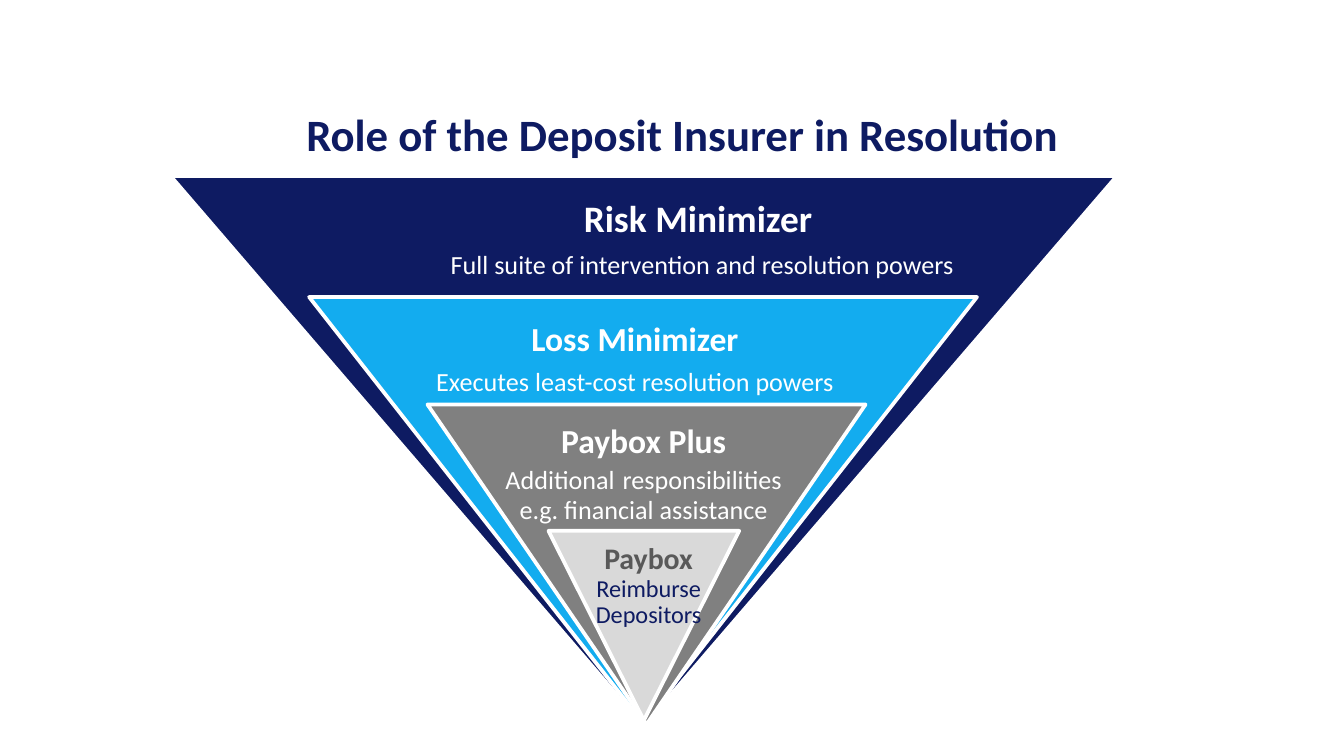
from dataclasses import dataclass

import pptx
import pptx.dml.color
import pptx.enum.shapes
import pptx.enum.text
import pptx.util

Pt = pptx.util.Pt
Shapes = pptx.enum.shapes.MSO_SHAPE


@dataclass(frozen=True)
class Theme:
    font: str = "Calibri"
    navy: str = "0E1B62"
    sky: str = "13ACEF"
    gray: str = "808080"
    silver: str = "D9D9D9"
    charcoal: str = "595959"
    white: str = "FFFFFF"
    title_size: int = 24
    large: int = 20
    medium: int = 18
    small: int = 16
    body: int = 14
    caption: int = 13


THEME = Theme()


@dataclass(frozen=True)
class Box:
    left: float
    top: float
    width: float
    height: float

    def lengths(self):
        return Pt(self.left), Pt(self.top), Pt(self.width), Pt(self.height)


@dataclass(frozen=True)
class Level:
    box: Box
    text_box: Box
    fill: str
    heading: str
    heading_size: int
    heading_color: str
    details: tuple
    detail_color: str
    gap: float = 0


LEVELS = [
    Level(Box(91.4, 94.3, 506.9, 293), Box(229, 107, 294.5, 46), THEME.navy,
          "Risk Minimizer ", THEME.large, THEME.white,
          (("Full suite of intervention and resolution powers", THEME.body),),
          THEME.white, 6.5),
    Level(Box(165.6, 159.1, 357.8, 228.2), Box(208.8, 172.6, 262.8, 42), THEME.sky,
          "Loss Minimizer", THEME.medium, THEME.white,
          (("Executes least-cost resolution powers", THEME.body),),
          THEME.white, 5.5),
    Level(Box(229, 216.7, 234.7, 171.4), Box(267.1, 227.2, 155.5, 56), THEME.gray,
          "Paybox Plus", THEME.medium, THEME.white,
          (("Additional", THEME.body), (" ", THEME.medium),
           ("responsibilities", THEME.body), (" ", THEME.medium),
           ("e.g. financial assistance", THEME.body)),
          THEME.white),
    Level(Box(293.8, 284.4, 102.2, 101.5), Box(308.2, 291.5, 78.5, 47), THEME.silver,
          "Paybox", THEME.small, THEME.charcoal,
          (("Reimburse Depositors", THEME.caption),),
          THEME.navy),
]


def rgb(value):
    return pptx.dml.color.RGBColor.from_string(value)


def add_run(paragraph, text, size, color, bold=False):
    run = paragraph.add_run()
    run.text = text
    run.font.name = THEME.font
    run.font.size = Pt(size)
    run.font.bold = bold
    run.font.color.rgb = rgb(color)


def add_filled_shape(slide, kind, box, fill):
    shape = slide.shapes.add_shape(kind, *box.lengths())
    shape.shadow.inherit = False
    shape.fill.solid()
    shape.fill.fore_color.rgb = rgb(fill)
    return shape


def draw_title(slide, box):
    shape = add_filled_shape(slide, Shapes.ROUNDED_RECTANGLE, box, THEME.white)
    shape.line.fill.background()
    frame = shape.text_frame
    frame.word_wrap = True
    frame.vertical_anchor = pptx.enum.text.MSO_ANCHOR.TOP
    frame.margin_top = Pt(5)
    frame.margin_bottom = 0
    paragraph = frame.paragraphs[0]
    paragraph.alignment = pptx.enum.text.PP_ALIGN.CENTER
    add_run(paragraph, "Role of the Deposit Insurer in Resolution",
            THEME.title_size, THEME.navy, True)


def draw_level(slide, level):
    triangle = add_filled_shape(slide, Shapes.TRAPEZOID, level.box, level.fill)
    triangle.rotation = 180
    triangle.adjustments[0] = 0.86
    triangle.line.color.rgb = rgb(THEME.white)
    triangle.line.width = Pt(2)

    frame = slide.shapes.add_textbox(*level.text_box.lengths()).text_frame
    frame.word_wrap = True
    frame.margin_left = frame.margin_right = Pt(1.5)
    frame.margin_top = frame.margin_bottom = 0
    heading = frame.paragraphs[0]
    heading.space_after = Pt(level.gap)
    add_run(heading, level.heading, level.heading_size, level.heading_color, True)
    detail = frame.add_paragraph()
    for text, size in level.details:
        add_run(detail, text, size, level.detail_color)
    for paragraph in frame.paragraphs:
        paragraph.alignment = pptx.enum.text.PP_ALIGN.CENTER
        paragraph.line_spacing = 0.9


def main():
    presentation = pptx.Presentation()
    presentation.slide_width = Pt(720)
    presentation.slide_height = Pt(405)
    slide = presentation.slides.add_slide(presentation.slide_layouts[6])
    for level in LEVELS:
        draw_level(slide, level)
    draw_title(slide, Box(103, 50.4, 524.9, 33.1))
    presentation.save("out.pptx")


if __name__ == "__main__":
    main()
